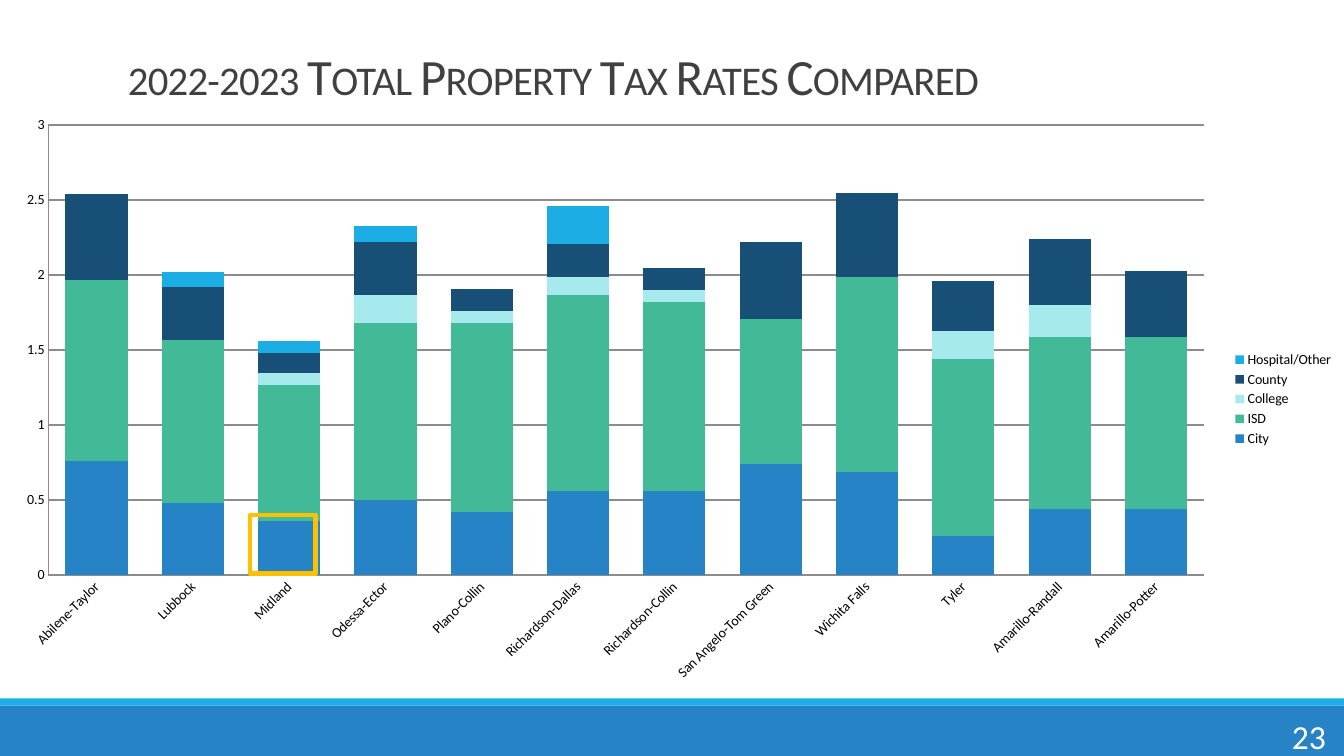
from lxml import etree
from pptx import Presentation
from pptx.chart.data import CategoryChartData
from pptx.dml.color import RGBColor
from pptx.enum.chart import XL_CHART_TYPE, XL_LEGEND_POSITION, XL_TICK_MARK
from pptx.enum.shapes import MSO_SHAPE
from pptx.enum.text import MSO_ANCHOR, PP_ALIGN
from pptx.oxml.ns import qn
from pptx.util import Inches, Pt

STACKED = XL_CHART_TYPE.COLUMN_STACKED
LEGEND_RIGHT = XL_LEGEND_POSITION.RIGHT
NO_TICK = XL_TICK_MARK.NONE
RECT = MSO_SHAPE.RECTANGLE
MIDDLE, BOTTOM = MSO_ANCHOR.MIDDLE, MSO_ANCHOR.BOTTOM
LEFT, RIGHT = PP_ALIGN.LEFT, PP_ALIGN.RIGHT

BLUE = RGBColor(0x26, 0x83, 0xC6)
SKY = RGBColor(0x1C, 0xAD, 0xE4)
GREEN = RGBColor(0x42, 0xBA, 0x97)
PALE = RGBColor(0xA6, 0xEA, 0xEE)
NAVY = RGBColor(0x17, 0x4F, 0x77)
GOLD = RGBColor(0xFF, 0xC0, 0x00)
GRAY = RGBColor(0x8C, 0x8C, 0x8C)
DARK = RGBColor(0x40, 0x40, 0x40)
BLACK = RGBColor(0, 0, 0)
WHITE = RGBColor(0xFF, 0xFF, 0xFF)
FONT = "Calibri"

CITIES = ["Abilene-Taylor", "Lubbock", "Midland", "Odessa-Ector",
          "Plano-Collin", "Richardson-Dallas", "Richardson-Collin",
          "San Angelo-Tom Green", "Wichita Falls", "Tyler",
          "Amarillo-Randall", "Amarillo-Potter"]
TAX_RATES = [
    ("City", BLUE, [0.76, 0.48, 0.36, 0.5, 0.42, 0.56,
                    0.56, 0.74, 0.69, 0.26, 0.44, 0.44]),
    ("ISD", GREEN, [1.21, 1.09, 0.91, 1.18, 1.26, 1.31,
                    1.26, 0.97, 1.3, 1.18, 1.15, 1.15]),
    ("College", PALE, [None, None, 0.08, 0.19, 0.08, 0.12,
                       0.08, None, None, 0.19, 0.21, None]),
    ("County", NAVY, [0.57, 0.35, 0.13, 0.35, 0.15, 0.22,
                      0.15, 0.51, 0.56, 0.33, 0.44, 0.44]),
    ("Hospital/Other", SKY, [None, 0.1, 0.08, 0.11, None, 0.25,
                             None, None, None, None, None, None]),
]


def add_rect(s, x, y, w, h, fill=None, line=None):
    sp = s.shapes.add_shape(RECT, Inches(x), Inches(y), Inches(w), Inches(h))
    sp.shadow.inherit = False
    if fill is None:
        sp.fill.background()
    else:
        sp.fill.solid()
        sp.fill.fore_color.rgb = fill
    if line is None:
        sp.line.fill.background()
    else:
        sp.line.color.rgb = line
        sp.line.width = Pt(3)


def add_text(s, text, x, y, w, h, size, color, align, anchor):
    sp = s.shapes.add_textbox(Inches(x), Inches(y), Inches(w), Inches(h))
    tf = sp.text_frame
    tf.word_wrap = True
    tf.vertical_anchor = anchor
    tf.margin_top = tf.margin_bottom = 0
    tf.text = text
    p = tf.paragraphs[0]
    p.alignment = align
    r = p.runs[0]
    set_font(r.font, size, color)
    return r


def set_font(font, size, color):
    font.name = FONT
    font.size = Pt(size)
    font.color.rgb = color


def style_axis(axis):
    axis.major_tick_mark = axis.minor_tick_mark = NO_TICK
    axis.format.line.color.rgb = GRAY
    axis.format.line.width = Pt(1)
    set_font(axis.tick_labels.font, 10, BLACK)


def set_plot_layout(chart, x, y, w, h):
    """Fix the inner plot area, in fractions of the chart."""
    area = chart._chartSpace.chart.plotArea
    for old in area.findall(qn("c:layout")):
        area.remove(old)
    layout = etree.Element(qn("c:layout"))
    manual = etree.SubElement(layout, qn("c:manualLayout"))
    for tag, val in (("layoutTarget", "inner"), ("xMode", "edge"),
                     ("yMode", "edge"), ("x", x), ("y", y),
                     ("w", w), ("h", h)):
        etree.SubElement(manual, qn("c:" + tag)).set("val", str(val))
    area.insert(0, layout)


def add_tax_chart(s):
    data = CategoryChartData()
    data.categories = CITIES
    for name, _, rates in TAX_RATES:
        data.add_series(name, rates)
    chart = s.shapes.add_chart(STACKED, Inches(0), Inches(1.05),
                               Inches(13.33), Inches(5.82), data).chart
    set_font(chart.font, 10, BLACK)
    chart.has_title = False

    plot = chart.plots[0]
    plot.gap_width = 55
    plot.overlap = 100
    plot.vary_by_categories = False
    for series, (_, color, _) in zip(plot.series, TAX_RATES):
        series.format.fill.solid()
        series.format.fill.fore_color.rgb = color

    style_axis(chart.category_axis)
    labels = chart.category_axis._element.find(qn("c:txPr"))
    labels.find(qn("a:bodyPr")).set("rot", "-2700000")

    rates = chart.value_axis
    style_axis(rates)
    rates.minimum_scale, rates.maximum_scale, rates.major_unit = 0, 3, 0.5
    rates.tick_labels.number_format = "General"
    rates.tick_labels.number_format_is_linked = False
    rates.major_gridlines.format.line.color.rgb = GRAY
    rates.major_gridlines.format.line.width = Pt(1)

    chart.has_legend = True
    chart.legend.position = LEGEND_RIGHT
    chart.legend.include_in_layout = False
    set_font(chart.legend.font, 10, BLACK)
    set_plot_layout(chart, 0.036, 0.033, 0.86, 0.767)


def main():
    prs = Presentation()
    prs.slide_width, prs.slide_height = Inches(13.33), Inches(7.5)
    s = prs.slides.add_slide(prs.slide_layouts[6])

    # Footer bands
    add_rect(s, 0, 7, 13.33, 0.5, fill=BLUE)
    add_rect(s, 0, 6.93, 13.33, 0.07, fill=SKY)

    # Title in small capitals, slightly tightened
    r = add_text(s, "2022-2023 Total Property Tax Rates Compared",
                 1.17, 0.13, 11, 0.92, 36.3, DARK, LEFT, BOTTOM)
    r.font._element.set("cap", "small")
    r.font._element.set("spc", "-50")

    # Chart with the Midland city rate highlighted
    add_tax_chart(s)
    add_rect(s, 2.48, 5.11, 0.65, 0.58, line=GOLD)

    # Slide number
    add_text(s, "23", 11.82, 7.1, 1.43, 0.4, 24, WHITE, RIGHT, MIDDLE)

    prs.save("out.pptx")


if __name__ == "__main__":
    main()
